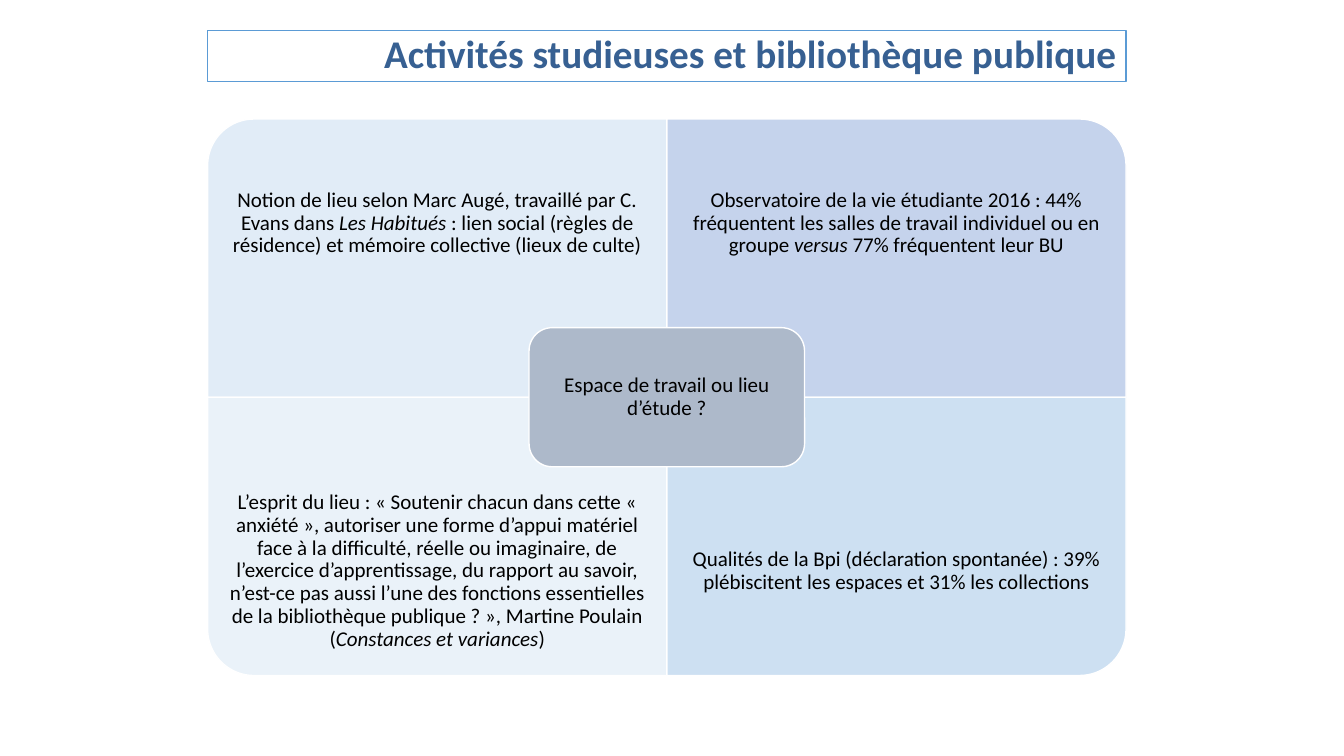
from lxml import etree
from pptx import Presentation
from pptx.dml.color import RGBColor
from pptx.enum.shapes import MSO_SHAPE
from pptx.enum.text import MSO_ANCHOR, MSO_AUTO_SIZE, PP_ALIGN
from pptx.oxml.ns import qn
from pptx.util import Pt

ROUND = MSO_SHAPE.ROUNDED_RECTANGLE
CORNER = MSO_SHAPE.ROUND_1_RECTANGLE
MIDDLE = MSO_ANCHOR.MIDDLE
FIXED = MSO_AUTO_SIZE.NONE
CENTER = PP_ALIGN.CENTER
RIGHT = PP_ALIGN.RIGHT

FONT = "Calibri"
COLORS = {
    "white": "FFFFFF",
    "black": "000000",
    "title": "376092",
    "frame": "5B9BD5",
    "pale": "DEEBF7",
    "mauve": "B4C7E7",
    "sky": "9DC3E6",
    "slate": "ADB9CA",
}

LEFT, TOP = 148.3, 85
WIDE, HIGH = 328, 198.75
TEXT_HIGH = HIGH * 0.75

PANELS = [
    (0, 0, 270, "pale", 90, [
        "Notion de lieu selon Marc Augé, travaillé par C. Evans dans ",
        "Les Habitués",
        " : lien social (règles de résidence) et mémoire collective "
        "(lieux de culte)"]),
    (0, 1, 0, "mauve", 77, [
        "Observatoire de la vie étudiante 2016 : 44% fréquentent les salles "
        "de travail individuel ou en groupe ",
        "versus",
        " 77% fréquentent leur BU"]),
    (1, 0, 180, "pale", 63, [
        "L’esprit du lieu : « Soutenir chacun dans cette « anxiété », "
        "autoriser une forme d’appui matériel face à la difficulté, réelle "
        "ou imaginaire, de l’exercice d’apprentissage, du rapport au savoir, "
        "n’est-ce pas aussi l’une des fonctions essentielles de la "
        "bibliothèque publique ? », Martine Poulain (",
        "Constances et variances",
        ")"]),
    (1, 1, 90, "sky", 50, [
        "Qualités de la Bpi (déclaration spontanée) : 39% plébiscitent les "
        "espaces et 31% les collections"]),
]


def tint(name):
    """Return the named colour."""
    return RGBColor.from_string(COLORS[name])


def paint(shape, fill, line):
    """Give a shape a solid fill and a one-point outline."""
    shape.fill.solid()
    shape.fill.fore_color.rgb = tint(fill)
    shape.line.color.rgb = tint(line)
    shape.line.width = Pt(1)


def write(shape, parts, inset):
    """Write centred body text whose every second part is italic."""
    frame = shape.text_frame
    frame.word_wrap = True
    frame.auto_size = FIXED
    frame.vertical_anchor = MIDDLE
    frame.margin_left = frame.margin_right = Pt(inset)
    frame.margin_top = frame.margin_bottom = Pt(inset)
    para = frame.paragraphs[0]
    para.alignment = CENTER
    para.line_spacing = 0.9
    for place, part in enumerate(parts):
        run = para.add_run()
        run.text = part
        run.font.name = FONT
        run.font.size = Pt(15)
        run.font.italic = place % 2 == 1
        run.font.color.rgb = tint("black")


def add_block(slide, kind, mid_x, mid_y, width, height, fill):
    """Add a filled shape around a centre point."""
    shape = slide.shapes.add_shape(
        kind, Pt(mid_x - width / 2), Pt(mid_y - height / 2),
        Pt(width), Pt(height))
    shape.shadow.inherit = False
    paint(shape, fill, "white")
    return shape


def add_panel(slide, row, col, turn, fill, alpha, parts):
    """Add one quarter of the matrix with its text."""
    left, top = LEFT + col * WIDE, TOP + row * HIGH
    size = (HIGH, WIDE) if turn % 180 else (WIDE, HIGH)
    shape = add_block(slide, CORNER, left + WIDE / 2, top + HIGH / 2,
                      *size, fill)
    shape.rotation = turn
    color = shape.fill._xPr.find(qn("a:solidFill"))[0]
    etree.SubElement(color, qn("a:alpha"), val=str(alpha * 1000))
    label = slide.shapes.add_textbox(
        Pt(left), Pt(top + row * (HIGH - TEXT_HIGH)), Pt(WIDE), Pt(TEXT_HIGH))
    write(label, parts, 8.4)


def set_title(slide, text):
    """Place and format the title."""
    title = slide.shapes.title
    title.left, title.top = Pt(LEFT), Pt(21.8)
    title.width, title.height = Pt(2 * WIDE), Pt(36.5)
    paint(title, "white", "frame")
    frame = title.text_frame
    frame.text = text
    frame.word_wrap = True
    frame.auto_size = FIXED
    frame.vertical_anchor = MIDDLE
    para = frame.paragraphs[0]
    para.alignment = RIGHT
    para.line_spacing = 0.9
    font = para.runs[0].font
    font.name, font.size, font.bold = FONT, Pt(28), True
    font.color.rgb = tint("title")


def main():
    """Build and save the slide."""
    deck = Presentation()
    deck.slide_width, deck.slide_height = Pt(960), Pt(540)
    slide = deck.slides.add_slide(deck.slide_layouts[5])
    set_title(slide, "Activités studieuses et bibliothèque publique")
    for panel in PANELS:
        add_panel(slide, *panel)
    core = add_block(slide, ROUND, LEFT + WIDE, TOP + HIGH,
                     WIDE * 0.6, HIGH / 2, "slate")
    write(core, ["Espace de travail ou lieu d’étude ?"], 9)
    deck.save("out.pptx")


if __name__ == "__main__":
    main()
